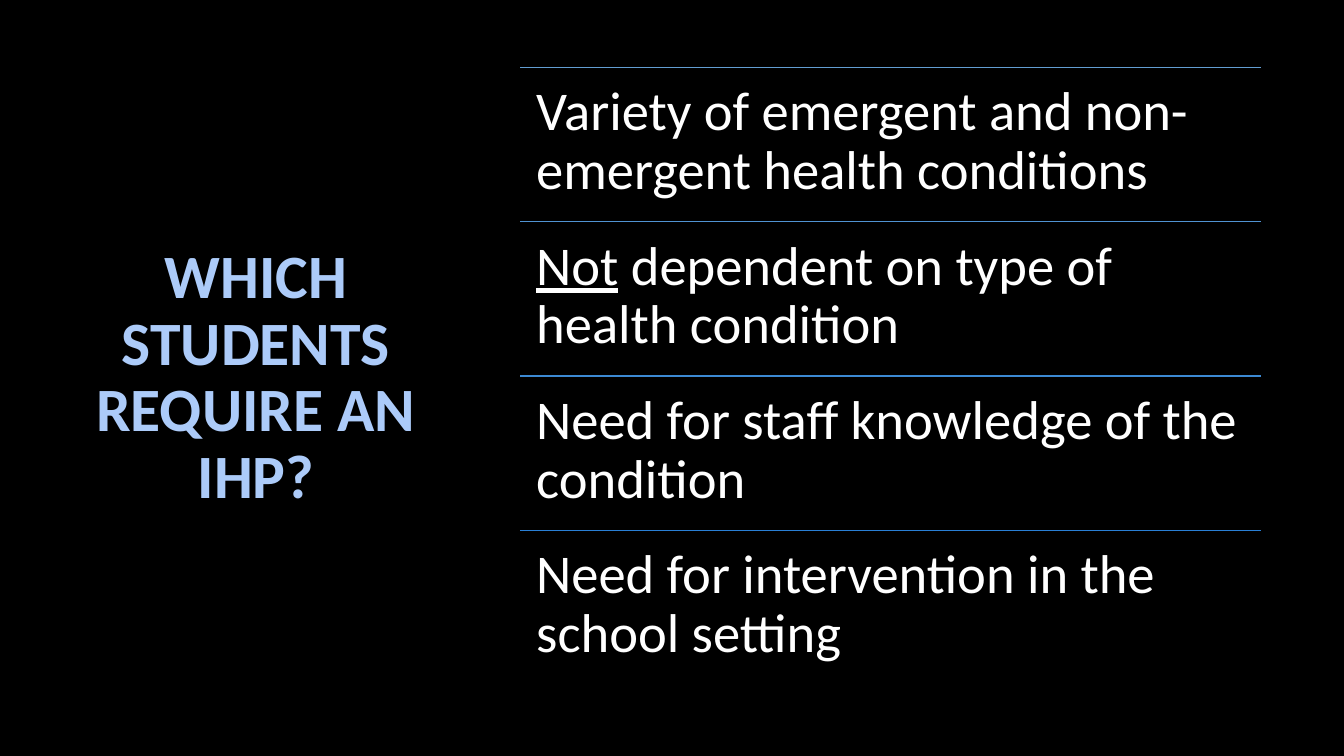
from pptx import Presentation
from pptx import util as u
from pptx.dml.color import RGBColor
from pptx.enum import shapes, text
from pptx.oxml.ns import qn
from lxml import etree

COLORS = {
    "background": "000000",
    "title": "ACCBF9",
    "body": "FFFFFF",
    "rules": ["629DD1", "5093D2", "3C89D3", "297FD5"],
}
FONT = "Calibri"
TITLE_BOX = (39.6, 49.7, 286.6, 441.4)
LIST_BOX = (371.5, 48.2, 529.2, 440.8)
INSET = 11.5

# Each row is a list of (wording, underlined) runs
ROWS = [
    [("Variety of emergent and non-emergent health conditions", False)],
    [("Not", True), (" dependent on type of health condition", False)],
    [("Need for staff knowledge of the condition", False)],
    [("Need for intervention in the school setting", False)],
]


def add_span(para, wording, size, color, bold=False, underline=False):
    span = para.add_run()
    span.text = wording
    span.font.name = FONT
    span.font.size = u.Pt(size)
    span.font.bold = bold
    span.font.underline = underline
    span.font.color.rgb = RGBColor.from_string(color)


def place_title(page, box):
    title = page.shapes.title
    title.left, title.top, title.width, title.height = map(u.Pt, box)
    frame = title.text_frame
    frame.word_wrap = True
    frame.auto_size = text.MSO_AUTO_SIZE.NONE
    frame.vertical_anchor = text.MSO_ANCHOR.MIDDLE
    para = frame.paragraphs[0]
    para.alignment = text.PP_ALIGN.CENTER
    para.line_spacing = 0.9
    add_span(para, "WHICH STUDENTS REQUIRE AN IHP?", 44, COLORS["title"], bold=True)


def place_row(page, box, spans, rule_color):
    left, top, width, height = box
    # Rule above the row
    rule = page.shapes.add_connector(
        shapes.MSO_CONNECTOR.STRAIGHT,
        u.Pt(left), u.Pt(top), u.Pt(left + width), u.Pt(top))
    rule.line.color.rgb = RGBColor.from_string(rule_color)
    rule.line.width = u.Pt(1)
    etree.SubElement(rule._element.spPr, qn("a:effectLst"))

    # Row wording
    row = page.shapes.add_textbox(*map(u.Pt, box))
    frame = row.text_frame
    frame.word_wrap = True
    frame.margin_left = frame.margin_right = u.Pt(INSET)
    frame.margin_top = frame.margin_bottom = u.Pt(INSET)
    para = frame.paragraphs[0]
    para.alignment = text.PP_ALIGN.LEFT
    para.line_spacing = 0.9
    for wording, underline in spans:
        add_span(para, wording, 39, COLORS["body"], underline=underline)


def place_list(page, box):
    left, top, width, height = box
    step = height / len(ROWS)
    for index, (spans, color) in enumerate(zip(ROWS, COLORS["rules"])):
        place_row(page, (left, top + index * step, width, step), spans, color)


def main():
    deck = Presentation()
    deck.slide_width, deck.slide_height = u.Pt(960), u.Pt(540)
    page = deck.slides.add_slide(deck.slide_layouts[5])  # Title Only
    page.background.fill.solid()
    page.background.fill.fore_color.rgb = RGBColor.from_string(COLORS["background"])
    place_title(page, TITLE_BOX)
    place_list(page, LIST_BOX)
    deck.save("out.pptx")


if __name__ == "__main__":
    main()
